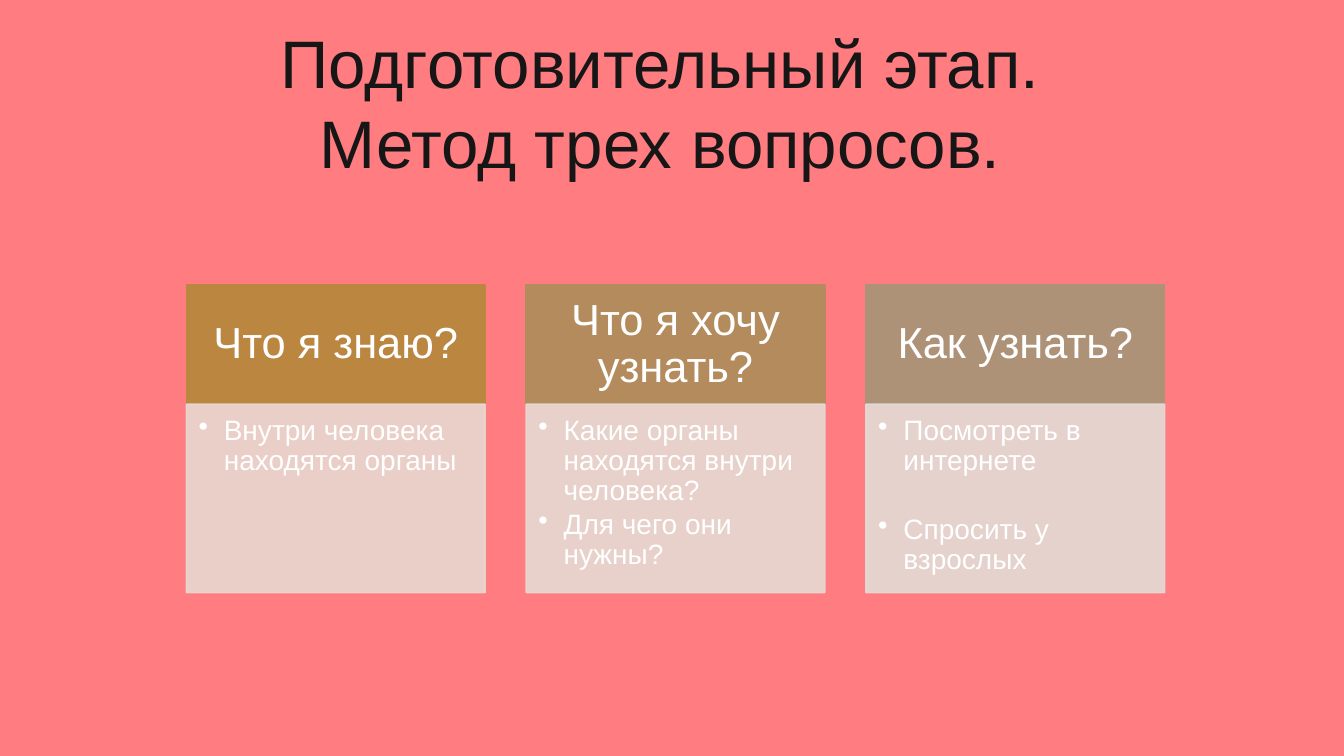
from dataclasses import dataclass
from typing import Any

from pptx import Presentation
from pptx import util as u
from pptx.dml.color import RGBColor
from pptx.enum import shapes, text
from pptx.oxml import ns
from pptx.oxml.xmlchemy import OxmlElement

COLORS = {"background": "FF7C80", "title": "161616", "white": "FFFFFF"}

# Column grid, in inches
LEFT, PITCH, WIDTH = 1.85, 3.37, 2.96
HEAD_TOP, HEAD_HEIGHT = 2.83, 1.18
BODY_TOP, BODY_HEIGHT = HEAD_TOP + HEAD_HEIGHT, 1.87

TITLE_FORMAT = {"alignment": text.PP_ALIGN.CENTER}
HEAD_FORMAT = {"alignment": text.PP_ALIGN.CENTER, "line_spacing": 0.9}
BODY_FORMAT = {"alignment": text.PP_ALIGN.LEFT, "line_spacing": 0.9,
               "space_after": u.Pt(2.5), "level": 1}


@dataclass
class Column:
    heading: str
    points: list[str]
    head_color: str
    body_color: str
    gap: float = 0  # extra points of space between bullets


COLUMNS = [
    Column("Что я знаю?", ["Внутри человека находятся органы"],
           "BB8640", "E7D9CF"),
    Column("Что я хочу узнать?",
           ["Какие органы находятся внутри человека?", "Для чего они нужны?"],
           "B48B5C", "E5DBD3"),
    Column("Как узнать?", ["Посмотреть в интернете", "Спросить у взрослых"],
           "AD9277", "E3DCD6", gap=25),
]


def set_format(target: Any, values: dict[str, Any]) -> None:
    for name, value in values.items():
        setattr(target, name, value)


def write(tf: Any, lines: list[str], size: float, color: str,
          values: dict[str, Any]) -> None:
    for i, line in enumerate(lines):
        p = tf.paragraphs[0] if i == 0 else tf.add_paragraph()
        set_format(p, values)
        r = p.add_run()
        r.text = line
        set_format(r.font, {"name": "Arial", "size": u.Pt(size)})
        r.font.color.rgb = RGBColor.from_string(color)


def add_box(slide: Any, left: float, top: float, height: float, color: str,
            insets: tuple[float, float, float, float], anchor: Any) -> Any:
    sp = slide.shapes.add_shape(
        shapes.MSO_SHAPE.RECTANGLE, u.Inches(left), u.Inches(top),
        u.Inches(WIDTH), u.Inches(height))
    sp.shadow.inherit = False
    for fill in (sp.fill, sp.line.fill):
        fill.solid()
        fill.fore_color.rgb = RGBColor.from_string(color)
    sp.line.width = u.Pt(1.25)
    sides = ("margin_left", "margin_top", "margin_right", "margin_bottom")
    set_format(sp.text_frame, {s: u.Inches(v) for s, v in zip(sides, insets)})
    set_format(sp.text_frame, {"word_wrap": True, "vertical_anchor": anchor})
    return sp


def set_opacity(sp: Any, percent: int) -> None:
    for clr in sp._element.spPr.iter(ns.qn("a:srgbClr")):
        alpha = OxmlElement("a:alpha")
        alpha.set("val", str(percent * 1000))
        clr.append(alpha)


def add_bullet(p: Any) -> None:
    pPr = p._p.get_or_add_pPr()
    indent = u.Inches(0.25)
    pPr.set("marL", str(indent))
    pPr.set("indent", str(-indent))
    bullet = OxmlElement("a:buChar")
    bullet.set("char", "•")
    pPr.append(bullet)


def add_column(slide: Any, column: Column, left: float) -> None:
    head = add_box(slide, left, HEAD_TOP, HEAD_HEIGHT, column.head_color,
                   (0.24, 0.14, 0.24, 0.14), text.MSO_ANCHOR.MIDDLE)
    write(head.text_frame, [column.heading], 31, COLORS["white"], HEAD_FORMAT)

    body = add_box(slide, left, BODY_TOP, BODY_HEIGHT, column.body_color,
                   (0.12, 0.12, 0.16, 0.17), text.MSO_ANCHOR.TOP)
    set_opacity(body, 90)
    write(body.text_frame, column.points, 20, COLORS["white"], BODY_FORMAT)
    for i, p in enumerate(body.text_frame.paragraphs):
        if i and column.gap:
            p.space_before = u.Pt(column.gap)
        add_bullet(p)


def main() -> None:
    prs = Presentation()
    prs.slide_width, prs.slide_height = u.Inches(13.33), u.Inches(7.5)
    slide = prs.slides.add_slide(prs.slide_layouts[6])
    slide.background.fill.solid()
    slide.background.fill.fore_color.rgb = RGBColor.from_string(
        COLORS["background"])

    # Title
    title = slide.shapes.add_textbox(
        u.Inches(2.45), u.Inches(0.16), u.Inches(8.2), u.Inches(1.72))
    title.text_frame.word_wrap = True
    write(title.text_frame,
          ["Подготовительный этап.", "Метод трех вопросов."],
          48, COLORS["title"], TITLE_FORMAT)

    # Three questions
    for i, column in enumerate(COLUMNS):
        add_column(slide, column, LEFT + i * PITCH)

    prs.save("out.pptx")


if __name__ == "__main__":
    main()
